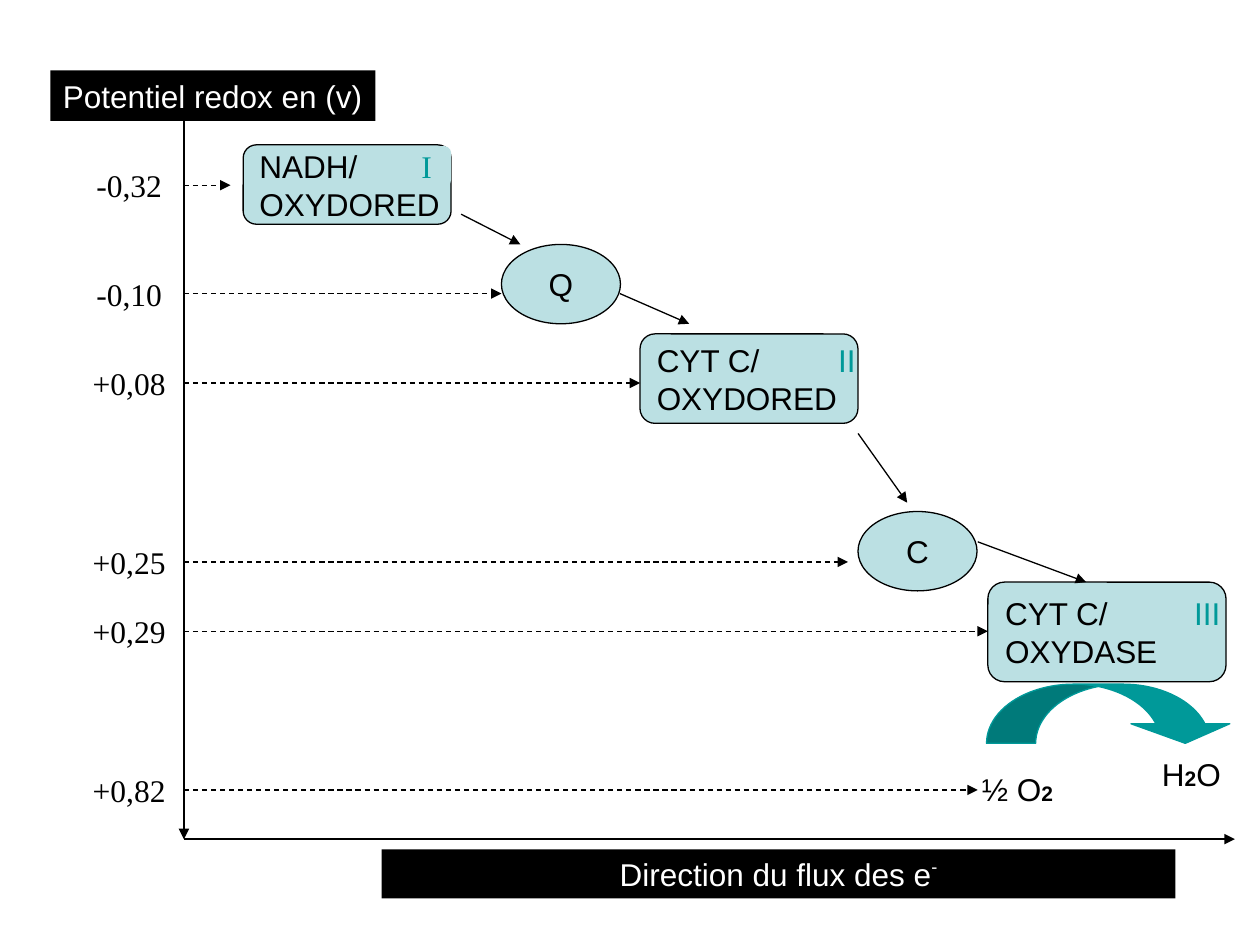
from lxml import etree
from pptx import Presentation
from pptx.dml.color import RGBColor
from pptx.enum.dml import MSO_LINE
from pptx.enum.shapes import MSO_CONNECTOR, MSO_SHAPE
from pptx.enum.text import MSO_ANCHOR, PP_ALIGN
from pptx.oxml.ns import qn
from pptx.util import Inches, Pt

RECT = MSO_SHAPE.RECTANGLE
ROUND = MSO_SHAPE.ROUNDED_RECTANGLE
ALT = MSO_SHAPE.FLOWCHART_ALTERNATE_PROCESS
OVAL = MSO_SHAPE.OVAL
BEND = MSO_SHAPE.CURVED_DOWN_ARROW
STRAIGHT = MSO_CONNECTOR.STRAIGHT
DASH = MSO_LINE.DASH
LEFT, MID = PP_ALIGN.LEFT, PP_ALIGN.CENTER
TOP, CENTRE = MSO_ANCHOR.TOP, MSO_ANCHOR.MIDDLE

BLACK = RGBColor(0x00, 0x00, 0x00)
WHITE = RGBColor(0xFF, 0xFF, 0xFF)
PALE = RGBColor(0xBB, 0xE0, 0xE3)
TEAL = RGBColor(0x00, 0x99, 0x99)

deck = Presentation()
deck.slide_width, deck.slide_height = Inches(10), Inches(7.5)
slide = deck.slides.add_slide(deck.slide_layouts[6])

# Grid of 100 columns by 75 rows, with square cells
COL = deck.slide_width / 100
ROW = deck.slide_height / 75


def arrow(x1, y1, x2, y2, dash=None):
    line = slide.shapes.add_connector(
        STRAIGHT, round(x1 * COL), round(y1 * ROW), round(x2 * COL), round(y2 * ROW))
    line.line.color.rgb = BLACK
    line.line.width = Pt(0.75)
    if dash:
        line.line.dash_style = dash
    etree.SubElement(line.line._get_or_add_ln(), qn("a:tailEnd"), type="triangle")
    etree.SubElement(line._element.spPr, qn("a:effectLst"))


def box(kind, x, y, w, h, lines=(), fill=WHITE, edge=None, ink=BLACK,
        font="Arial", align=MID):
    """Draw a shape; each line of text is a list of runs."""
    shape = slide.shapes.add_shape(
        kind, round(x * COL), round(y * ROW), round(w * COL), round(h * ROW))
    shape.shadow.inherit = False
    shape.fill.solid()
    shape.fill.fore_color.rgb = fill
    if edge is None:
        shape.line.fill.background()
    else:
        shape.line.color.rgb = edge
        shape.line.width = Pt(0.75)
    frame = shape.text_frame
    frame.word_wrap = False
    frame.vertical_anchor = CENTRE
    for i, runs in enumerate(lines):
        para = frame.add_paragraph() if i else frame.paragraphs[0]
        para.alignment = align
        for text in runs:
            run = para.add_run()
            run.text = text
            run.font.name = font
            run.font.size = Pt(18)
            run.font.color.rgb = ink
    return shape


# Axes
AXIS, BASE = 14.6, 66.6
arrow(AXIS, 9.1, AXIS, BASE)
arrow(AXIS, BASE, 98, BASE)

# Enzyme complexes, with a tab stop before the number
for kind, x, y, w, h, lines, stop in (
        (ALT, 19.3, 11.5, 16.5, 6.3, [["NADH/"], ["OXYDORED"]], None),
        (ROUND, 50.8, 26.5, 17.3, 7.1, [["CYT C/", "\tII"], ["OXYDORED"]], 14.4),
        (ROUND, 78.4, 46.2, 18.9, 7.9, [["CYT C/", "\tIII"], ["OXYDASE"]], 15)):
    shape = box(kind, x, y, w, h, lines, PALE, BLACK, align=LEFT)
    if stop:
        head = shape.text_frame.paragraphs[0]
        tabs = etree.SubElement(head._p.get_or_add_pPr(), qn("a:tabLst"))
        etree.SubElement(tabs, qn("a:tab"), pos=str(round(stop * COL)), algn="l")
        head.runs[1].font.color.rgb = TEAL
box(ROUND, 31.9, 11.6, 3.9, 3.2, [["I"]], PALE, ink=TEAL, font="Times New Roman")

# Mobile carriers
for name, x, y in (("Q", 39.8, 19.4), ("C", 68.1, 40.6)):
    box(OVAL, x, y, 9.45, 6.3, [[name]], PALE, BLACK)

# Oxygen reduced to water
box(BEND, 78.3, 54.3, 19.7, 4.7, fill=TEAL, edge=TEAL).adjustments[0] = 0.83
bend = slide.shapes[-1].adjustments
bend[1], bend[2] = 1.67, 0.33
gas = box(ROUND, 76.8, 59.5, 7.9, 6.3, [["½ O", "2"]])
water = box(ROUND, 90.2, 59.6, 8.7, 6.3, [["H", "2", "O"]])
water.text_frame.vertical_anchor = TOP
water.text_frame.margin_top = 0
for shape in (gas, water):
    count = shape.text_frame.paragraphs[0].runs[1].font
    count.size, count.bold = Pt(12), True

# Redox levels: label and dashed arrow to the carrier
for text, y, end in (("-0,32", 14.7, 18.3), ("-0,10", 23.3, 39.8),
                     ("+0,08", 30.4, 50.8), ("+0,25", 44.6, 67.3),
                     ("+0,29", 50.1, 78.4), ("+0,82", 62.7, 77.6)):
    box(RECT, 6.7, y - 2.35, 7.1, 4.7, [[text]], font="Times New Roman")
    arrow(AXIS, y, end, y, DASH)

# Electron flow between carriers
for ends in ((36.6, 17, 41.3, 19.4), (49.2, 23.3, 54.7, 25.7),
             (68.1, 34.4, 72, 39.9), (77.6, 43, 86.2, 46.2)):
    arrow(*ends)

# Axis titles
flow = box(RECT, 30.3, 67.4, 63, 3.9, [["Direction du flux des e", "-"]], BLACK, ink=WHITE)
flow.text_frame.paragraphs[0].runs[1].font._element.set("baseline", "40000")
title = box(RECT, 4, 5.6, 25.8, 4, [["Potentiel redox en (v)"]], BLACK, ink=WHITE, align=LEFT)
title.text_frame.vertical_anchor = TOP

deck.save("out.pptx")
